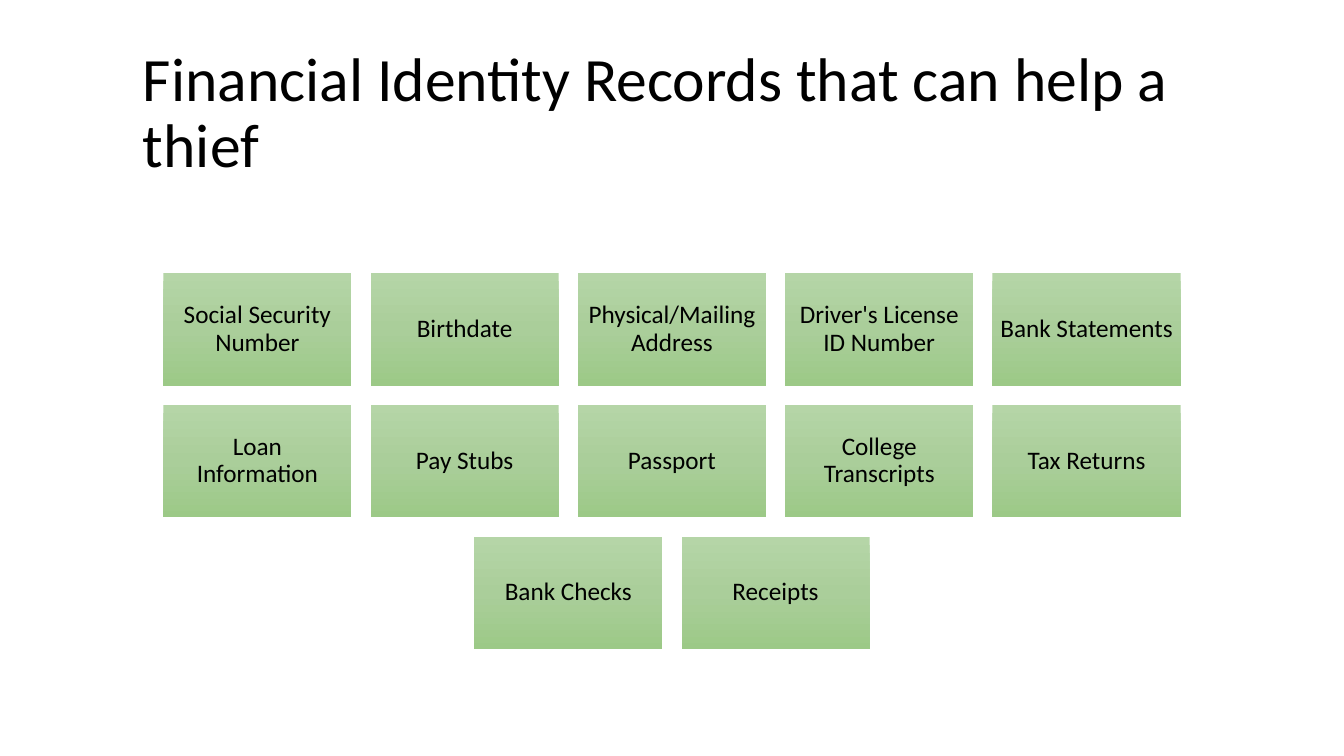
from copy import deepcopy

from pptx import Presentation
from pptx.dml.color import RGBColor
from pptx.enum.shapes import MSO_SHAPE
from pptx.enum.text import MSO_ANCHOR, PP_ALIGN
from pptx.oxml.ns import qn
from pptx.util import Inches, Pt

BLACK = RGBColor(0x00, 0x00, 0x00)
GREEN_STOPS = [
    (0, RGBColor(0xB5, 0xD5, 0xA7)),
    (0.5, RGBColor(0xAA, 0xCE, 0x9A)),
    (1, RGBColor(0x9C, 0xC9, 0x87)),
]
FONT = "Calibri"
TITLE = "Financial Identity Records that can help a thief"
RECORD_ROWS = [
    ["Social Security Number", "Birthdate", "Physical/Mailing Address",
     "Driver's License ID Number", "Bank Statements"],
    ["Loan Information", "Pay Stubs", "Passport",
     "College Transcripts", "Tax Returns"],
    ["Bank Checks", "Receipts"],
]
GAP = Inches(0.19)
TILE_INSET = Inches(0.07)


def write_text(shape, text, size, align):
    frame = shape.text_frame
    frame.word_wrap = True
    frame.vertical_anchor = MSO_ANCHOR.MIDDLE
    para = frame.paragraphs[0]
    para.text = text
    para.alignment = align
    para.line_spacing = 0.9
    para.font.name = FONT
    para.font.size = Pt(size)
    para.font.color.rgb = BLACK
    return frame


def fill_green(shape):
    fill = shape.fill
    fill.gradient()
    fill.gradient_angle = 270  # counter-clockwise, so top to bottom
    # The default gradient has two stops; add a middle one
    first_stop = next(shape._element.iter(qn("a:gs")))
    first_stop.addnext(deepcopy(first_stop))
    for stop, (position, color) in zip(fill.gradient_stops, GREEN_STOPS):
        stop.position = position
        stop.color.rgb = color


def add_title(page, left, top, width, height):
    box = page.shapes.add_textbox(left, top, width, height)
    write_text(box, TITLE, 44, PP_ALIGN.LEFT)


def add_tile(page, text, left, top, width, height):
    tile = page.shapes.add_shape(MSO_SHAPE.RECTANGLE, left, top, width, height)
    tile.shadow.inherit = False
    tile.line.fill.background()
    fill_green(tile)
    frame = write_text(tile, text, 18, PP_ALIGN.CENTER)
    frame.margin_left = frame.margin_right = TILE_INSET
    frame.margin_top = frame.margin_bottom = TILE_INSET


def add_record_grid(page, left, top, width, height):
    columns = max(len(row) for row in RECORD_ROWS)
    tile_width = (width - GAP * (columns - 1)) // columns
    tile_height = (height - GAP * (len(RECORD_ROWS) - 1)) // len(RECORD_ROWS)
    for row_index, row in enumerate(RECORD_ROWS):
        # Shorter rows are centred in the grid
        indent = (columns - len(row)) * (tile_width + GAP) // 2
        row_top = top + row_index * (tile_height + GAP)
        for column, text in enumerate(row):
            tile_left = left + indent + column * (tile_width + GAP)
            add_tile(page, text, tile_left, row_top, tile_width, tile_height)


def main():
    deck = Presentation()
    deck.slide_width = Inches(13.33)
    deck.slide_height = Inches(7.5)
    page = deck.slides.add_slide(deck.slide_layouts[6])
    add_title(page, Inches(1.32), Inches(0.31), Inches(10.7), Inches(1.65))
    add_record_grid(page, Inches(1.62), Inches(2.71), Inches(10.09), Inches(3.73))
    deck.save("out.pptx")


if __name__ == "__main__":
    main()
